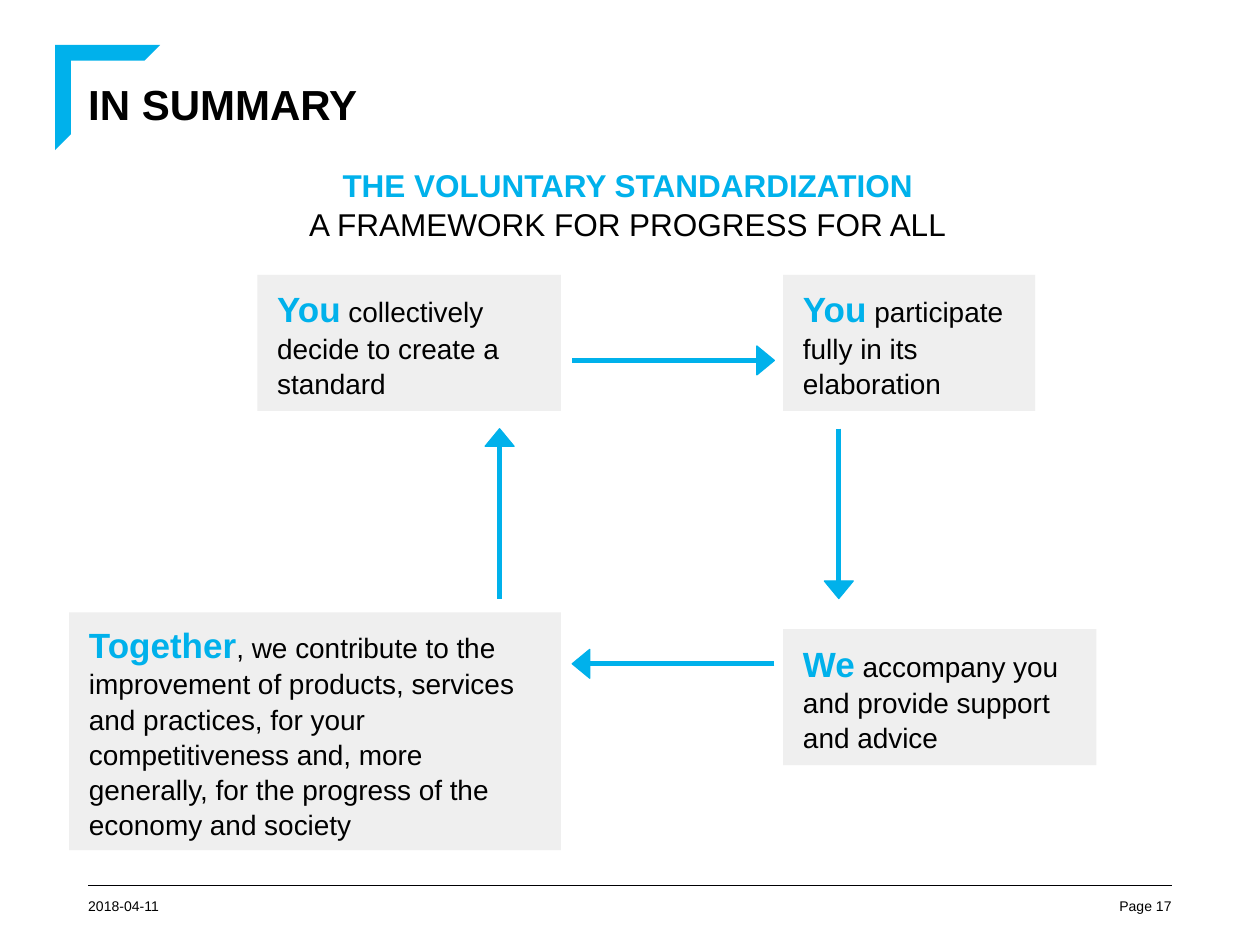
from pptx import Presentation
from pptx.dml.color import RGBColor
from pptx.enum.shapes import MSO_CONNECTOR as CONN, MSO_SHAPE as SHAPE
from pptx.enum.text import MSO_ANCHOR as ANCHOR, MSO_AUTO_SIZE as AUTO, PP_ALIGN as ALIGN
from pptx.oxml.ns import qn
from pptx.util import Pt
from lxml.etree import SubElement

BLUE, BLACK, GREY = "00B1EB", "000000", "EFEFEF"
LEFT, RIGHT = 50.4, 669.6
BOXES = [
    (147, 157, 173.5, 77.8, "You", " collectively decide to create a standard", 0),
    (447.5, 157, 144, 77.8, "You", " participate fully in its elaboration", 6),
    (447.5, 359.5, 179, 77.8, "We", " accompany you and provide support and advice", 6),
    (39.5, 350, 281, 135.8, "Together", ", we contribute to the improvement of products, "
     "services and practices, for your competitiveness and, more generally, "
     "for the progress of the economy and society", 0),
]
ARROWS = [
    (327, 206, 442.5, 206, 90),
    (479.3, 245, 479.3, 342, 180),
    (442.5, 379.3, 327, 379.3, 270),
    (285.5, 342, 285.5, 245, 0),
]


def rgb(color):
    """Turn a hex string into a colour."""
    return RGBColor.from_string(color)


def set_font(font, size, color=BLACK, bold=False):
    """Format a font in Arial."""
    font.name, font.size, font.bold = "Arial", Pt(size), bold
    font.color.rgb = rgb(color)


def set_frame(tf, x=0, y=0, wrap=True, anchor=ANCHOR.TOP):
    """Set the margins, wrapping and anchor of a text frame."""
    tf.margin_left = tf.margin_right = Pt(x)
    tf.margin_top = tf.margin_bottom = Pt(y)
    tf.word_wrap, tf.vertical_anchor = wrap, anchor
    tf.auto_size = AUTO.NONE


def paint(sp, fill):
    """Give a shape a flat fill without line or shadow."""
    sp.shadow.inherit = False
    sp.fill.solid()
    sp.fill.fore_color.rgb = rgb(fill)
    sp.line.fill.background()


def add_line(s, x1, y1, x2, y2, color, width):
    """Draw a straight line."""
    c = s.shapes.add_connector(CONN.STRAIGHT, Pt(x1), Pt(y1), Pt(x2), Pt(y2))
    c.line.color.rgb, c.line.width = rgb(color), Pt(width)
    SubElement(c._element.spPr, qn("a:effectLst"))


def add_arrow(s, x1, y1, x2, y2, turn, w=16.5, h=10):
    """Draw a line with a broad triangular head ending at the second point."""
    dx, dy = {0: (0, -1), 90: (1, 0), 180: (0, 1), 270: (-1, 0)}[turn]
    add_line(s, x1, y1, x2 - dx * h, y2 - dy * h, BLUE, 3)
    cx, cy = x2 - dx * h / 2, y2 - dy * h / 2
    sp = s.shapes.add_shape(SHAPE.ISOSCELES_TRIANGLE, Pt(cx - w / 2), Pt(cy - h / 2), Pt(w), Pt(h))
    paint(sp, BLUE)
    sp.line.color.rgb, sp.line.width = rgb(BLUE), Pt(0.75)
    sp.rotation = turn


def add_box(s, x, y, w, h, lead, rest, after):
    """Add a grey box whose text opens with a highlighted word."""
    sp = s.shapes.add_shape(SHAPE.RECTANGLE, Pt(x), Pt(y), Pt(w), Pt(h))
    paint(sp, GREY)
    set_frame(sp.text_frame, 11.34, 7.2, anchor=ANCHOR.MIDDLE)
    p = sp.text_frame.paragraphs[0]
    p.alignment, p.line_spacing, p.space_after = ALIGN.LEFT, 1.05, Pt(after)
    for text, size, color, bold in ((lead, 20, BLUE, True), (rest, 16, BLACK, False)):
        r = p.add_run()
        r.text = text
        set_font(r.font, size, color, bold)


def add_text(s, x, y, w, h, lines, size, align, margins=(0, 0)):
    """Add a text box of one paragraph per (text, colour, bold) line."""
    tf = s.shapes.add_textbox(Pt(x), Pt(y), Pt(w), Pt(h)).text_frame
    set_frame(tf, *margins, wrap=False)
    for i, (text, color, bold) in enumerate(lines):
        p = tf.add_paragraph() if i else tf.paragraphs[0]
        p.text, p.alignment, p.line_spacing = text, align, 1.05
        set_font(p.font, size, color, bold)


def add_corner(s, x, y, size, band):
    """Draw the angled corner bracket beside the title."""
    cut = size - band
    fb = s.shapes.build_freeform(Pt(x + size), Pt(y))
    points = [(0, 0), (0, size), (band, cut), (band, band), (cut, band)]
    fb.add_line_segments([(Pt(x + a), Pt(y + b)) for a, b in points], close=True)
    paint(fb.convert_to_shape(), BLUE)


def set_title(s, text):
    """Place and format the title."""
    sp = s.shapes.title
    sp.left, sp.top, sp.width, sp.height = Pt(LEFT), Pt(43.2), Pt(RIGHT - LEFT), Pt(39)
    set_frame(sp.text_frame)
    p = sp.text_frame.paragraphs[0]
    p.text, p.alignment, p.line_spacing = text, ALIGN.LEFT, 1.05
    set_font(p.font, 24, bold=True)


def main():
    """Build the summary slide."""
    prs = Presentation()
    prs.slide_width, prs.slide_height = Pt(720), Pt(540)
    s = prs.slides.add_slide(prs.slide_layouts[5])
    add_line(s, LEFT, 506, RIGHT, 506, "000003", 0.25)
    add_corner(s, 31.5, 25.7, 60, 9)
    set_title(s, "IN SUMMARY")
    add_text(s, 167.5, 90, 382.5, 51,
             [("THE VOLUNTARY STANDARDIZATION", BLUE, True),
              ("A FRAMEWORK FOR PROGRESS FOR ALL", BLACK, False)],
             18, ALIGN.CENTER, (7.2, 3.6))
    for box in BOXES:
        add_box(s, *box)
    for arrow in ARROWS:
        add_arrow(s, *arrow)
    add_text(s, LEFT, 512.5, 75.6, 9.5, [("2018-04-11", BLACK, False)], 8, ALIGN.LEFT)
    add_text(s, RIGHT - 31, 512.5, 31, 9.5, [("Page 17", BLACK, False)], 8, ALIGN.RIGHT)
    prs.save("out.pptx")


if __name__ == "__main__":
    main()
